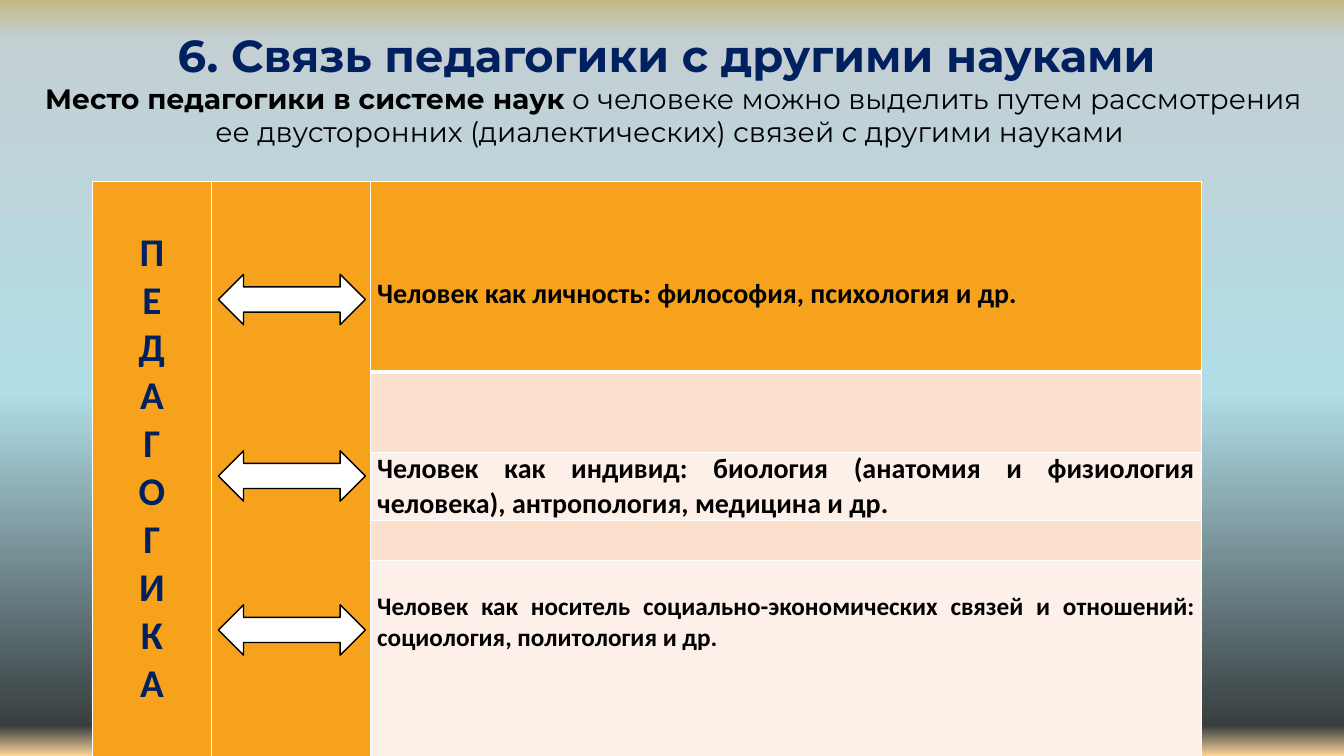
from dataclasses import dataclass

from lxml import etree
from pptx import Presentation
from pptx.dml.color import RGBColor
from pptx.enum.shapes import MSO_SHAPE
from pptx.enum.text import PP_ALIGN
from pptx.oxml.ns import qn
from pptx.util import Pt

CENTER, JUSTIFY = PP_ALIGN.CENTER, PP_ALIGN.JUSTIFY
DOUBLE_ARROW = MSO_SHAPE.LEFT_RIGHT_ARROW


@dataclass(frozen=True)
class Theme:
    navy: str = "002060"
    black: str = "000000"
    white: str = "FFFFFF"
    orange: str = "F6A21D"
    peach: str = "FBE0CD"
    cream: str = "FDF0E8"
    background: tuple = ((0, "C5B883"), (5, "C3CFD3"), (52, "B0DDE6"),
                         (96, "383E40"), (100, "FBD599"))
    heading_font: str = "Montserrat"
    table_font: str = "Calibri"
    title: int = 32
    letter: int = 28
    body: int = 20
    small: int = 18


theme = Theme()


def format_runs(paragraph, font, size, color, align):
    paragraph.alignment = align
    for run in paragraph.runs:
        run.font.name = font
        run.font.size = Pt(size)
        run.font.bold = True
        run.font.color.rgb = RGBColor.from_string(color)


def style_cell(cell, color, bottom_width):
    """Fill the cell and give it white borders and narrow side margins."""
    cell.fill.solid()
    cell.fill.fore_color.rgb = RGBColor.from_string(color)
    cell.margin_left = cell.margin_right = Pt(5)
    cell.margin_top = cell.margin_bottom = 0
    properties = cell._tc.get_or_add_tcPr()
    widths = {"lnL": 1, "lnR": 1, "lnT": 1, "lnB": bottom_width}
    for index, (side, width) in enumerate(widths.items()):
        border = etree.Element(qn(f"a:{side}"), w=str(Pt(width)))
        fill = etree.SubElement(border, qn("a:solidFill"))
        etree.SubElement(fill, qn("a:srgbClr"), val=theme.white)
        properties.insert(index, border)


prs = Presentation()
prs.slide_width, prs.slide_height = Pt(960), Pt(540)
slide = prs.slides.add_slide(prs.slide_layouts[6])

# Background gradient, running from top to bottom
background = slide.background.fill
background.gradient()
background.gradient_angle = 270
stops = slide.element.find(f".//{qn('a:gsLst')}")
for stop in list(stops):
    stops.remove(stop)
for position, color in theme.background:
    stop = etree.SubElement(stops, qn("a:gs"), pos=str(position * 1000))
    etree.SubElement(stop, qn("a:srgbClr"), val=color)

# Heading
heading = slide.shapes.add_textbox(Pt(15), Pt(16), Pt(932), Pt(94)).text_frame
heading.word_wrap = True
title = heading.paragraphs[0]
title.text = "6. Связь педагогики с другими науками "
format_runs(title, theme.heading_font, theme.title, theme.navy, CENTER)
intro = heading.add_paragraph()
intro.add_run().text = "Место педагогики в системе наук"
explanation = intro.add_run()
explanation.text = (" о человеке можно выделить путем рассмотрения ее двусторонних "
                    "(диалектических) связей с другими науками ")
format_runs(intro, theme.heading_font, theme.body, theme.black, CENTER)
explanation.font.bold = False

# Table of sciences: height, fill, text, size, space above the text
rows = [
    (136, theme.orange, "Человек как личность: философия, психология и др.", theme.body, 68),
    (57.5, theme.peach, "", theme.body, 0),
    (49, theme.cream, "Человек как индивид: биология (анатомия и физиология человека), "
     "антропология, медицина и др.", theme.body, 0),
    (28.5, theme.peach, "", theme.body, 0),
    (139, theme.cream, "Человек как носитель социально-экономических связей и отношений: "
     "социология, политология и др.", theme.small, 22),
]
column_widths = (85, 113.5, 594)
table = slide.shapes.add_table(len(rows), len(column_widths), Pt(66), Pt(129.5),
                               Pt(sum(column_widths)), Pt(410)).table
table.first_row = table.horz_banding = False
for column, width in zip(table.columns, column_widths):
    column.width = Pt(width)

for index, (height, color, sciences, size, space_above) in enumerate(rows):
    table.rows[index].height = Pt(height)
    bottom_width = 3 if index == 0 else 1
    for column in (0, 1):
        style_cell(table.cell(index, column), theme.orange, bottom_width)
    science_cell = table.cell(index, 2)
    style_cell(science_cell, color, bottom_width)
    science_cell.margin_top = Pt(space_above)
    science_cell.text_frame.text = sciences
    format_runs(science_cell.text_frame.paragraphs[0], theme.table_font, size,
                theme.black, JUSTIFY)

for column in (0, 1):
    table.cell(0, column).merge(table.cell(len(rows) - 1, column))
pedagogy = table.cell(0, 0)
pedagogy.margin_top = Pt(34)
pedagogy.text_frame.text = "\n".join("ПЕДАГОГИКА")
for letter in pedagogy.text_frame.paragraphs:
    format_runs(letter, theme.table_font, theme.letter, theme.navy, CENTER)

# Two-way links between pedagogy and each group of sciences
for top in (196, 322, 432):
    link = slide.shapes.add_shape(DOUBLE_ARROW, Pt(156), Pt(top), Pt(105), Pt(36))
    link.shadow.inherit = False
    link.fill.solid()
    link.fill.fore_color.rgb = RGBColor.from_string(theme.white)
    link.line.color.rgb = RGBColor.from_string(theme.black)
    link.line.width = Pt(1)

prs.save("out.pptx")
